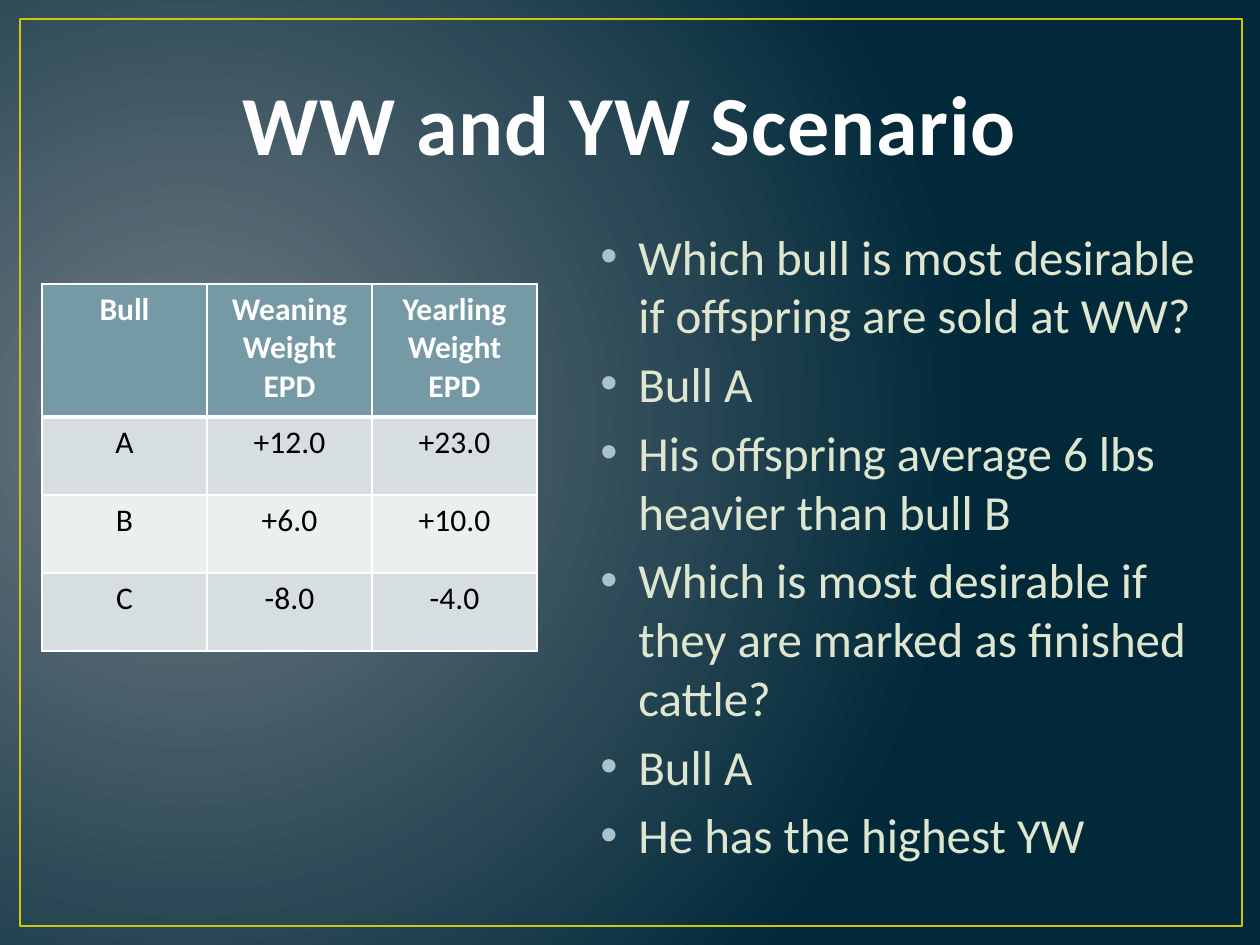
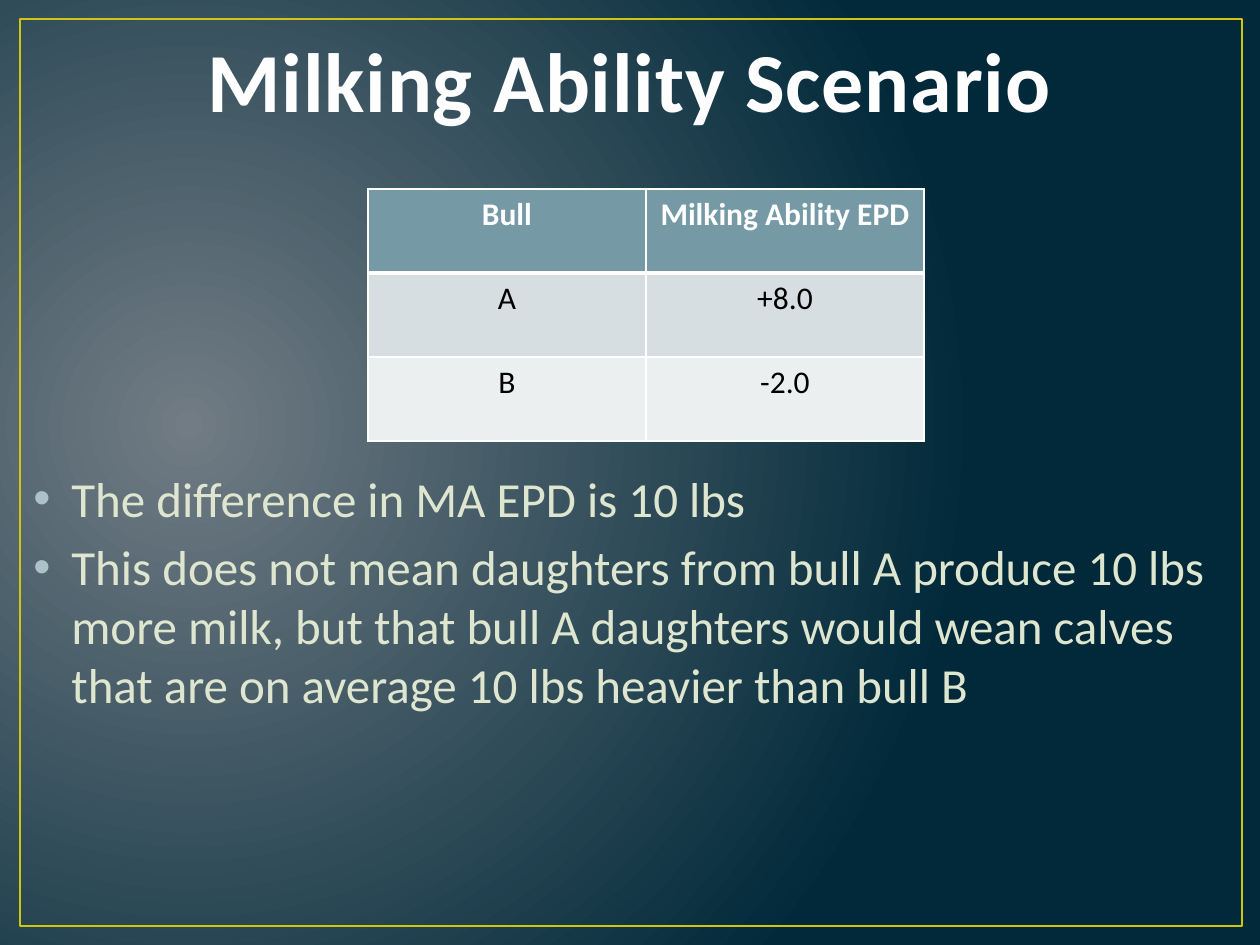
"""Build two slides on comparing bulls by their EPD values."""
from dataclasses import dataclass

from lxml.etree import SubElement
from pptx import Presentation
from pptx.dml.color import RGBColor
from pptx.enum.shapes import MSO_SHAPE
from pptx.enum.text import MSO_ANCHOR, MSO_AUTO_SIZE, PP_ALIGN
from pptx.oxml.ns import qn
from pptx.slide import Slide
from pptx.table import _Cell as Cell
from pptx.text.text import _Paragraph as Paragraph, _Run as Run
from pptx.util import Emu, Pt

PX_PER_INCH = 126
FONT = "Calibri"
GLOW = RGBColor(0x71, 0x7C, 0x84)
NAVY = RGBColor(0x01, 0x29, 0x3A)
FRAME_YELLOW = RGBColor(0xCF, 0xC6, 0x0D)
TITLE_WHITE = RGBColor(0xFE, 0xFE, 0xFE)
TITLE_OUTLINE = RGBColor(0x38, 0x4F, 0x55)
BODY_CREAM = RGBColor(0xDF, 0xE6, 0xD0)
BULLET_BLUE = RGBColor(0xAC, 0xC2, 0xC9)
HEADER_TEAL = RGBColor(0x75, 0x9A, 0xA5)
BAND_DARK = RGBColor(0xD6, 0xDE, 0xE1)
BAND_LIGHT = RGBColor(0xEC, 0xEF, 0xF0)
WHITE = RGBColor(0xFF, 0xFF, 0xFF)
BLACK = RGBColor(0x00, 0x00, 0x00)


def px(length: int) -> Emu:
    return Emu(round(length * 914400 / PX_PER_INCH))


@dataclass(frozen=True)
class Box:
    left: int
    top: int
    width: int
    height: int

    def emu(self) -> tuple[Emu, Emu, Emu, Emu]:
        return px(self.left), px(self.top), px(self.width), px(self.height)


@dataclass(frozen=True)
class EpdTable:
    left: int
    top: int
    column_width: int
    header_height: int
    row_height: int
    rows: list[list[str]]


@dataclass(frozen=True)
class Scenario:
    title: str
    title_box: Box
    table: EpdTable
    bullets: list[str]
    bullets_box: Box


FRAME = Box(20, 19, 1222, 907)
SCENARIOS = [
    Scenario(
        "WW and YW Scenario",
        Box(63, 38, 1134, 141),
        EpdTable(42, 284, 165, 133, 78, [
            ["Bull", "Weaning Weight EPD", "Yearling Weight EPD"],
            ["A", "+12.0", "+23.0"],
            ["B", "+6.0", "+10.0"],
            ["C", "-8.0", "-4.0"],
        ]),
        [
            "Which bull is most desirable if offspring are sold at WW?",
            "Bull A",
            "His offspring average 6 lbs heavier than bull B",
            "Which is most desirable if they are marked as finished cattle?",
            "Bull A",
            "He has the highest YW",
        ],
        Box(588, 220, 640, 693),
    ),
    Scenario(
        "Milking Ability Scenario",
        Box(63, -21, 1134, 157),
        EpdTable(368, 189, 278, 84, 84, [
            ["Bull", "Milking Ability EPD"],
            ["A", "+8.0"],
            ["B", "-2.0"],
        ]),
        [
            "The difference in MA EPD is 10 lbs",
            "This does not mean daughters from bull A produce 10 lbs more milk, "
            "but that bull A daughters would wean calves that are on average "
            "10 lbs heavier than bull B",
        ],
        Box(21, 462, 1218, 425),
    ),
]


def add_run(paragraph: Paragraph, text: str, size: int, color: RGBColor, bold: bool = False) -> Run:
    run = paragraph.add_run()
    run.text = text
    run.font.name = FONT
    run.font.size = Pt(size)
    run.font.bold = bold
    run.font.color.rgb = color
    return run


def add_line(parent, tag: str, points: float, color: RGBColor):
    line = SubElement(parent, qn(tag), w=str(Pt(points)))
    fill = SubElement(line, qn("a:solidFill"))
    SubElement(fill, qn("a:srgbClr"), val=str(color))
    return line


def paint_background(slide: Slide) -> None:
    fill = slide.background.fill
    fill.gradient()
    for stop, color in zip(fill.gradient_stops, (GLOW, NAVY)):
        stop.color.rgb = color
    gradient = next(slide.element.iter(qn("a:gradFill")))
    linear = gradient.find(qn("a:lin"))
    radial = SubElement(gradient, qn("a:path"), path="circle")
    SubElement(radial, qn("a:fillToRect"), l="15000", t="50000", r="85000", b="60000")
    gradient.replace(linear, radial)


def add_frame(slide: Slide) -> None:
    frame = slide.shapes.add_shape(MSO_SHAPE.RECTANGLE, *FRAME.emu())
    frame.shadow.inherit = False
    frame.fill.background()
    frame.line.color.rgb = FRAME_YELLOW
    frame.line.width = Pt(1.5)


def set_title(slide: Slide, text: str, box: Box) -> None:
    title = slide.shapes.title
    title.left, title.top, title.width, title.height = box.emu()
    frame = title.text_frame
    frame.auto_size = MSO_AUTO_SIZE.NONE
    frame.vertical_anchor = MSO_ANCHOR.BOTTOM
    paragraph = frame.paragraphs[0]
    paragraph.alignment = PP_ALIGN.CENTER
    run = add_run(paragraph, text, 48, TITLE_WHITE, bold=True)
    properties = run.font._element
    properties.set("spc", "50")
    properties.insert(0, add_line(properties, "a:ln", 1.05, TITLE_OUTLINE))


def style_cell(cell: Cell, text: str, row: int) -> None:
    properties = cell._tc.get_or_add_tcPr()
    widths = {"L": 1, "R": 1, "T": 3 if row == 1 else 1, "B": 3 if row == 0 else 1}
    for side, points in widths.items():
        add_line(properties, f"a:ln{side}", points, WHITE)
    header = row == 0
    cell.fill.solid()
    cell.fill.fore_color.rgb = HEADER_TEAL if header else BAND_DARK if row % 2 else BAND_LIGHT
    paragraph = cell.text_frame.paragraphs[0]
    paragraph.alignment = PP_ALIGN.CENTER
    add_run(paragraph, text, 18, WHITE if header else BLACK, bold=header)


def add_epd_table(slide: Slide, data: EpdTable) -> None:
    row_count, column_count = len(data.rows), len(data.rows[0])
    box = Box(data.left, data.top, data.column_width * column_count,
              data.header_height + data.row_height * (row_count - 1))
    table = slide.shapes.add_table(row_count, column_count, *box.emu()).table
    for column in table.columns:
        column.width = px(data.column_width)
    for row, texts in enumerate(data.rows):
        table.rows[row].height = px(data.row_height if row else data.header_height)
        for column, text in enumerate(texts):
            style_cell(table.cell(row, column), text, row)


def add_bullets(slide: Slide, texts: list[str], box: Box) -> None:
    frame = slide.shapes.add_textbox(*box.emu()).text_frame
    frame.word_wrap = True
    for index, text in enumerate(texts):
        paragraph = frame.add_paragraph() if index else frame.paragraphs[0]
        paragraph.space_before = Pt(5.6)
        properties = paragraph._p.get_or_add_pPr()
        properties.set("marL", str(px(38)))
        properties.set("indent", str(px(-38)))
        bullet_color = SubElement(properties, qn("a:buClr"))
        SubElement(bullet_color, qn("a:srgbClr"), val=str(BULLET_BLUE))
        SubElement(properties, qn("a:buFont"), typeface="Arial")
        SubElement(properties, qn("a:buChar"), char="•")
        add_run(paragraph, text, 28, BODY_CREAM)


def main() -> None:
    presentation = Presentation()
    presentation.slide_width, presentation.slide_height = px(1260), px(945)
    title_only = presentation.slide_layouts.get_by_name("Title Only")
    for scenario in SCENARIOS:
        slide = presentation.slides.add_slide(title_only)
        paint_background(slide)
        add_frame(slide)
        set_title(slide, scenario.title, scenario.title_box)
        add_epd_table(slide, scenario.table)
        add_bullets(slide, scenario.bullets, scenario.bullets_box)
    presentation.save("out.pptx")


if __name__ == "__main__":
    main()
